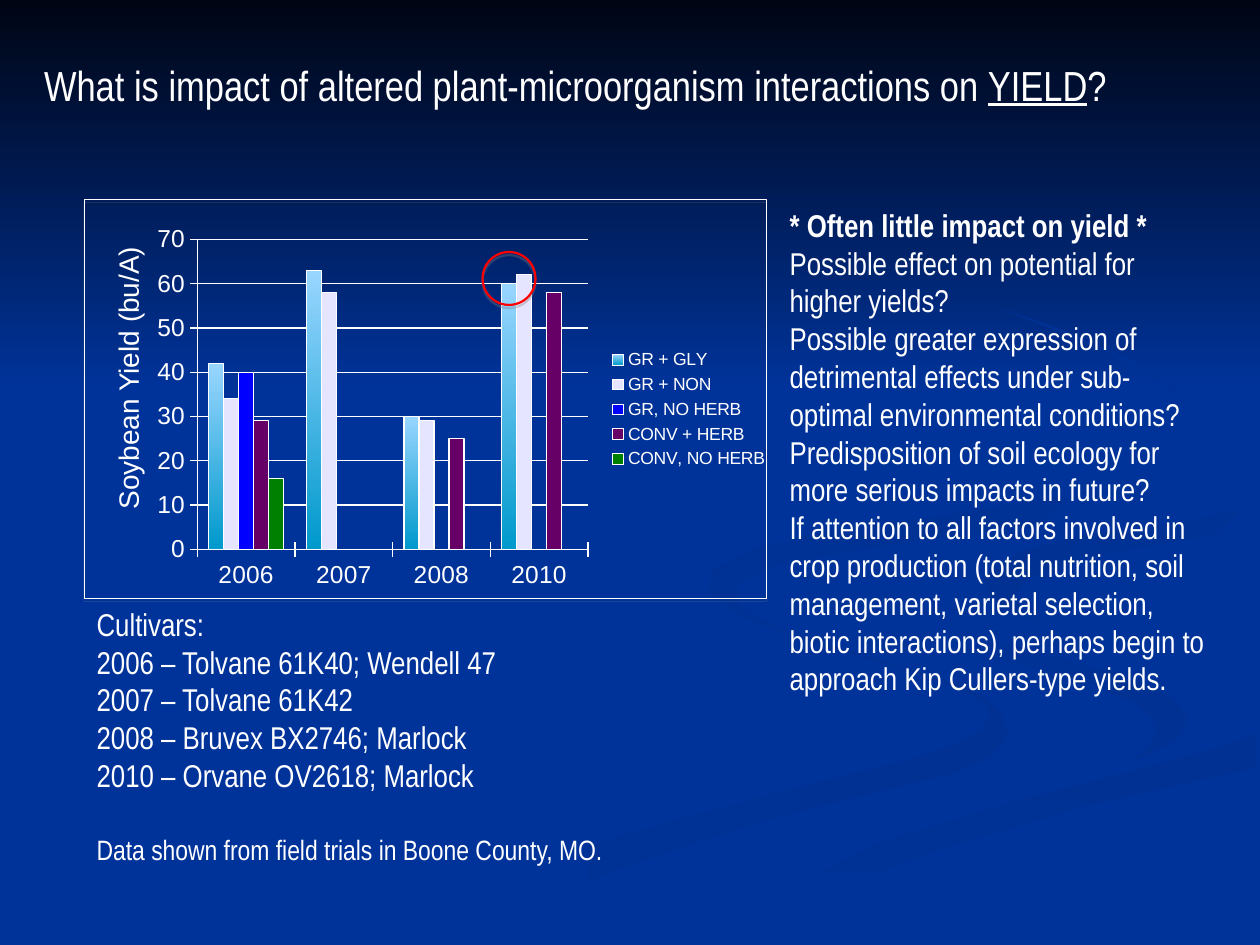
from dataclasses import dataclass

from lxml.etree import SubElement
from pptx import Presentation
from pptx.chart.data import CategoryChartData
from pptx.dml.color import RGBColor
from pptx.enum.chart import XL_CHART_TYPE, XL_LEGEND_POSITION, XL_TICK_MARK
from pptx.enum.shapes import MSO_SHAPE
from pptx.enum.text import MSO_ANCHOR, MSO_AUTO_SIZE, PP_ALIGN
from pptx.oxml import parse_xml
from pptx.oxml.ns import nsdecls, qn
from pptx.util import Pt


@dataclass(frozen=True)
class Theme:
    navy: RGBColor = RGBColor.from_string("003399")
    swirl: RGBColor = RGBColor.from_string("003193")
    night: RGBColor = RGBColor.from_string("000514")
    white: RGBColor = RGBColor.from_string("FFFFFF")
    red: RGBColor = RGBColor.from_string("FF0000")
    sky: RGBColor = RGBColor.from_string("99D6FF")
    teal: RGBColor = RGBColor.from_string("0099CC")
    lavender: RGBColor = RGBColor.from_string("E5E5FF")
    blue: RGBColor = RGBColor.from_string("0000FF")
    purple: RGBColor = RGBColor.from_string("660066")
    green: RGBColor = RGBColor.from_string("008000")
    shadow: str = "808080"
    text_font: str = "Arial Narrow"
    chart_font: str = "Arial"
    title_size: int = 24
    body_size: int = 18
    note_size: int = 16
    axis_size: int = 14
    legend_size: int = 10


THEME = Theme()


def write(frame, text, size=THEME.body_size, font=THEME.text_font, bold=False,
          underline=False, space_before=0, continued=False):
    """Add text as a new unbulleted paragraph, or to the last one if continued."""
    paragraph = frame.paragraphs[-1]
    if not continued:
        if paragraph.runs:
            paragraph = frame.add_paragraph()
        properties = paragraph._p.get_or_add_pPr()
        properties.set("marL", "0")
        properties.set("indent", "0")
        SubElement(properties, qn("a:buNone"))
        paragraph.alignment = PP_ALIGN.LEFT
        paragraph.space_before = Pt(space_before)
    run = paragraph.add_run()
    run.text = text
    run.font.name, run.font.size = font, Pt(size)
    run.font.bold, run.font.underline = bold, underline
    run.font.color.rgb = THEME.white


def place(placeholder, left, top, width, height, anchor=MSO_ANCHOR.TOP):
    """Position a placeholder in front of what is drawn so far; return its frame."""
    placeholder.left, placeholder.top = Pt(left), Pt(top)
    placeholder.width, placeholder.height = Pt(width), Pt(height)
    placeholder.element.getparent().append(placeholder.element)
    frame = placeholder.text_frame
    frame.word_wrap = True
    frame.auto_size = MSO_AUTO_SIZE.NONE
    frame.vertical_anchor = anchor
    return frame


presentation = Presentation()
presentation.slide_width, presentation.slide_height = Pt(720), Pt(540)
slide = presentation.slides.add_slide(presentation.slide_layouts[3])
shapes = slide.shapes
title, cultivars, findings = list(slide.placeholders)[:3]

# Backdrop: dark sky over navy, with faint swirls
slide.background.fill.solid()
slide.background.fill.fore_color.rgb = THEME.navy
sky_band = shapes.add_shape(MSO_SHAPE.RECTANGLE, 0, 0, Pt(720), Pt(221.76))

# Swirl outlines in hundredths of an inch
wide_sweep = [
    (781, 553), (745, 538), (682, 519), (626, 502), (594, 485), (576, 469), (575, 459),
    (570, 468), (576, 480), (602, 495), (654, 513), (714, 530), (762, 547), (783, 559),
    (786, 566), (780, 579), (759, 590), (714, 605), (652, 620), (579, 639), (499, 661),
    (417, 690), (338, 727), (300, 749), (361, 749), (431, 714), (499, 687), (564, 665),
    (623, 647), (699, 628), (756, 614), (786, 601), (797, 588), (800, 581), (795, 567)]
inner_curl = [
    (943, 570), (930, 553), (905, 540), (850, 524), (792, 509), (745, 490), (727, 474),
    (724, 464), (725, 474), (733, 488), (755, 505), (797, 524), (854, 539), (900, 557),
    (915, 571), (917, 585), (907, 597), (894, 605), (925, 593), (941, 581)]
lower_band = [
    (519, 747), (503, 749), (571, 749), (614, 726), (670, 702), (752, 672), (861, 640),
    (949, 620), (998, 609), (998, 581), (950, 598), (867, 620), (764, 647), (662, 681),
    (599, 706), (543, 733)]
main_ribbon = [
    (725, 464), (734, 483), (775, 503), (831, 519), (889, 535), (931, 553), (943, 570),
    (936, 587), (902, 603), (843, 618), (743, 643), (663, 668), (573, 703), (477, 749),
    (519, 747), (599, 719), (696, 669), (797, 638), (904, 610), (976, 590), (999, 581),
    (999, 538), (923, 523), (848, 503), (794, 480), (781, 463), (792, 447), (835, 430),
    (899, 418), (968, 409), (999, 402), (999, 387), (942, 399), (851, 411), (770, 427),
    (732, 446)]
right_curl = [
    (781, 460), (786, 474), (806, 487), (826, 496), (809, 484), (805, 472), (816, 459),
    (859, 443), (936, 429), (998, 420), (998, 402), (933, 415), (865, 424), (810, 437)]
upper_curl = [
    (695, 434), (797, 420), (873, 406), (926, 389), (954, 368), (960, 351), (955, 331),
    (933, 308), (895, 285), (841, 261), (795, 245), (875, 277), (929, 308), (952, 335),
    (950, 355), (919, 376), (864, 391), (758, 408), (651, 423), (597, 436), (565, 453),
    (563, 469), (585, 488), (618, 500), (586, 481), (585, 463), (620, 447)]

backdrop = [(sky_band, THEME.night, THEME.navy, 270)]
for outline, start_color, end_color, angle in [
    (wide_sweep, THEME.navy, THEME.swirl, 0),
    (inner_curl, THEME.navy, THEME.swirl, 315),
    (lower_band, THEME.swirl, THEME.navy, 270),
    (main_ribbon, THEME.navy, THEME.navy, 0),
    (right_curl, THEME.swirl, THEME.navy, 315),
    (upper_curl, THEME.swirl, THEME.navy, 315),
]:
    builder = shapes.build_freeform(*outline[0], scale=Pt(0.72))
    builder.add_line_segments(outline[1:], close=True)
    backdrop.append((builder.convert_to_shape(), start_color, end_color, angle))
for part, start_color, end_color, angle in backdrop:
    part.shadow.inherit = False
    part.line.fill.background()
    part.fill.gradient()
    part.fill.gradient_angle = angle
    for stop, color in zip(part.fill.gradient_stops, (start_color, end_color)):
        stop.color.rgb = color

# Yield chart
yields = CategoryChartData()
yields.categories = ["2006", "2007", "2008", "2010"]
treatments = [
    ("GR + GLY", (42, 63, 30, 60), THEME.teal),
    ("GR + NON", (34, 58, 29, 62), THEME.lavender),
    ("GR, NO HERB", (40, 0, 0, 0), THEME.blue),
    ("CONV + HERB", (29, 0, 25, 58), THEME.purple),
    ("CONV, NO HERB", (16, 0, 0, 0), THEME.green),
]
for treatment, values, _ in treatments:
    yields.add_series(treatment, values)
chart = shapes.add_chart(XL_CHART_TYPE.COLUMN_CLUSTERED, Pt(84), Pt(126),
                         Pt(360), Pt(216), yields).chart
chart.has_title = False
chart.font.name, chart.font.size = THEME.chart_font, Pt(THEME.legend_size)
chart.font.color.rgb = THEME.white
chart.has_legend = True
chart.legend.position = XL_LEGEND_POSITION.RIGHT
chart.legend.include_in_layout = False

plot = chart.plots[0]
plot.gap_width, plot.overlap, plot.vary_by_categories = 150, 0, False
for series, (_, _, color) in zip(plot.series, treatments):
    series.format.line.color.rgb = THEME.white
    series.format.line.width = Pt(0.75)
    series.format.fill.solid()
    series.format.fill.fore_color.rgb = color
gly_fill = plot.series[0].format.fill
gly_fill.gradient()
gly_fill.gradient_angle = 270
for stop, color in zip(gly_fill.gradient_stops, (THEME.sky, THEME.teal)):
    stop.color.rgb = color

yield_axis = chart.value_axis
yield_axis.minimum_scale, yield_axis.maximum_scale, yield_axis.major_unit = 0, 70, 10
yield_axis.has_major_gridlines = True
for axis in (chart.category_axis, yield_axis):
    axis.major_tick_mark = XL_TICK_MARK.CROSS
    axis.tick_labels.font.size = Pt(THEME.axis_size)
for rule in (chart.category_axis, yield_axis, yield_axis.major_gridlines):
    rule.format.line.color.rgb = THEME.white
    rule.format.line.width = Pt(0.75)

# Fixed places for the plot area and legend, as fractions of the chart
for region, target, fractions in [
    (chart.legend._element, "", (0.73, 0.33, 0.26, 0.34)),
    (chart._chartSpace.chart.plotArea, '<c:layoutTarget val="inner"/>',
     (0.08, 0.05, 0.62, 0.82)),
]:
    for old_layout in region.findall(qn("c:layout")):
        region.remove(old_layout)
    modes = "".join(f'<c:{axis}Mode val="edge"/>' for axis in "xy")
    sizes = "".join(f'<c:{key} val="{value}"/>' for key, value in zip("xywh", fractions))
    layout = parse_xml(f'<c:layout {nsdecls("c")}><c:manualLayout>{target}{modes}{sizes}'
                       '</c:manualLayout></c:layout>')
    region.insert(1 if region is chart.legend._element else 0, layout)

axis_title = shapes.add_textbox(Pt(-10), Pt(201.6), Pt(166.32), Pt(26.64))
axis_title.rotation = 270
axis_title.text_frame.word_wrap = False
write(axis_title.text_frame, "Soybean Yield (bu/A)", THEME.note_size, THEME.chart_font)

cultivar_frame = place(cultivars, 48, 342, 390, 188.64)
for line in [
    "Cultivars:",
    "2006 – Tolvane 61K40; Wendell 47",
    "2007 – Tolvane 61K42",
    "2008 – Bruvex BX2746; Marlock",
    "2010 – Orvane OV2618; Marlock",
]:
    write(cultivar_frame, line)
write(cultivar_frame, "Data shown from field trials in Boone County, MO.",
      THEME.note_size, space_before=22)

# Circle around the 2010 result, and the chart frame
for preset, box, color, weight in [
    (MSO_SHAPE.OVAL, (275.76, 144, 30.24, 30.24), THEME.red, 1.25),
    (MSO_SHAPE.RECTANGLE, (48, 114, 390, 228), THEME.white, 0.25),
]:
    marker = shapes.add_shape(preset, *map(Pt, box))
    marker.fill.background()
    marker.line.color.rgb, marker.line.width = color, Pt(weight)
    marker.shadow.inherit = False
    marker.element.spPr.find(qn("a:effectLst")).append(parse_xml(
        f'<a:outerShdw {nsdecls("a")} dist="{Pt(1.8)}" dir="5400000" rotWithShape="0">'
        f'<a:srgbClr val="{THEME.shadow}"><a:alpha val="35000"/></a:srgbClr></a:outerShdw>'))

title_frame = place(title, 18, 30, 642, 36.72, MSO_ANCHOR.MIDDLE)
write(title_frame, "What is impact of altered plant-microorganism interactions on ",
      THEME.title_size)
write(title_frame, "YIELD", THEME.title_size, underline=True, continued=True)
write(title_frame, "?", THEME.title_size, continued=True)

findings_frame = place(findings, 444, 114, 252, 312.48)
write(findings_frame, "* Often little impact on yield *", bold=True)
for finding in [
    "Possible effect on potential for higher yields?",
    "Possible greater expression of detrimental effects under sub-optimal "
    "environmental conditions?",
    "Predisposition of soil ecology for more serious impacts in future?",
    "If attention to all factors involved in crop production (total nutrition, soil "
    "management, varietal selection, biotic interactions), perhaps begin to approach "
    "Kip Cullers-type yields.",
]:
    write(findings_frame, finding)

# The layout's date, footer and number placeholders are not copied to the slide
presentation.save("out.pptx")
